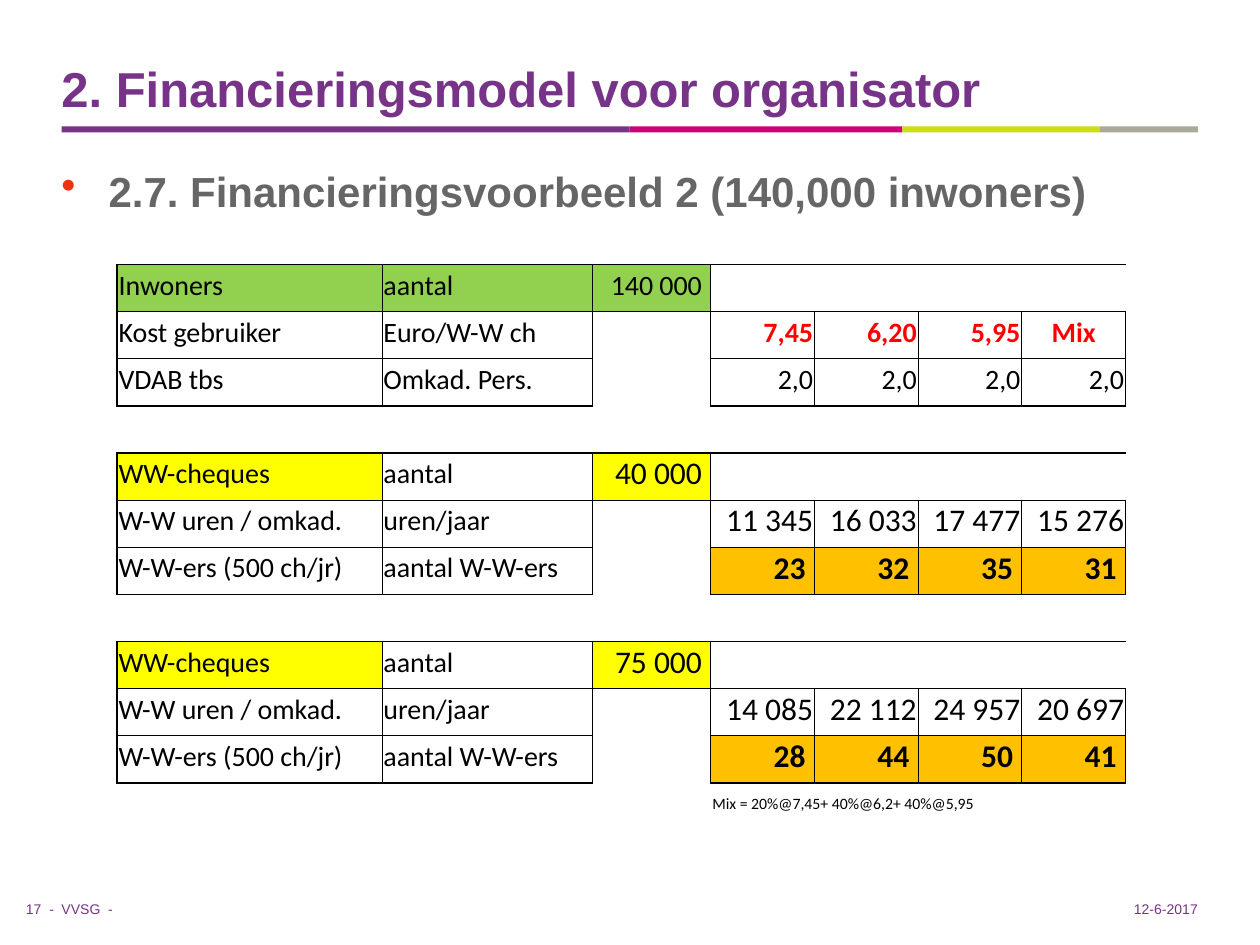
import pptx
import pptx.dml.color
import pptx.enum.shapes
import pptx.enum.text
import pptx.oxml
import pptx.oxml.ns
import pptx.util
from pptx.util import Cm

ALIGN = pptx.enum.text.PP_ALIGN
ANCHOR = pptx.enum.text.MSO_ANCHOR
PURPLE = "773388"
GREEN, YELLOW, ORANGE = "92D050", "FFFF00", "FFC000"
COLUMN_WIDTHS = [5.34, 4.24, 2.39] + [2.09] * 4
BLOCK_ROWS = 3
BLOCK_PITCH = 4
ROW_COUNT = 12
VALUE_COLUMN, FIRST_RATE, LAST_COLUMN = 2, 3, 6

BLOCKS = [
    {
        "labels": [("Inwoners", "aantal"), ("Kost gebruiker", "Euro/W-W ch"), ("VDAB tbs", "Omkad. Pers.")],
        "total": "140 000",
        "rates": [["7,45", "6,20", "5,95", "Mix"], ["2,0"] * 4],
    },
    {
        "total": "40 000",
        "rates": [["11 345", "16 033", "17 477", "15 276"], ["23", "32", "35", "31"]],
    },
    {
        "total": "75 000",
        "rates": [["14 085", "22 112", "24 957", "20 697"], ["28", "44", "50", "41"]],
    },
]
CHEQUE_LABELS = [("WW-cheques", "aantal"), ("W-W uren / omkad.", "uren/jaar"), ("W-W-ers (500 ch/jr)", "aantal W-W-ers")]


def color(hex_string):
    return pptx.dml.color.RGBColor.from_string(hex_string)


def add_run(paragraph, text, size, font_name, font_color, bold=False):
    run = paragraph.add_run()
    run.text = text
    run.font.size = pptx.util.Pt(size)
    run.font.name = font_name
    run.font.bold = bold
    run.font.color.rgb = color(font_color)


def add_textbox(slide, left, top, width, height, anchor=ANCHOR.TOP, align=ALIGN.LEFT):
    frame = slide.shapes.add_textbox(Cm(left), Cm(top), Cm(width), Cm(height)).text_frame
    frame.word_wrap = True
    frame.margin_left = frame.margin_right = frame.margin_top = frame.margin_bottom = 0
    frame.vertical_anchor = anchor
    paragraph = frame.paragraphs[0]
    paragraph.alignment = align
    return paragraph


def add_heading(slide, left, top, width, height):
    paragraph = add_textbox(slide, left, top, 20.42, height - 0.3, ANCHOR.BOTTOM)
    add_run(paragraph, "2. Financieringsmodel voor organisator", 28, "Arial", PURPLE, True)
    stripe_left = left
    for share, fill in ((0.5, PURPLE), (0.24, "CC0077"), (0.174, "CCDD11"), (0.086, "AAAA99")):
        stripe = slide.shapes.add_shape(
            pptx.enum.shapes.MSO_SHAPE.RECTANGLE,
            Cm(stripe_left), Cm(top + height - 0.12), Cm(share * width), Cm(0.12))
        stripe.shadow.inherit = False
        stripe.fill.solid()
        stripe.fill.fore_color.rgb = color(fill)
        stripe.line.fill.background()
        stripe_left += share * width


def add_bullet_line(slide, left, top, width, height):
    paragraph = add_textbox(slide, left, top, width, height)
    properties = paragraph._p.get_or_add_pPr()
    properties.set("marL", str(Cm(0.95)))
    properties.set("indent", str(Cm(-0.95)))
    bullet_color = pptx.oxml.ns.qn("a:buClr")
    properties.append(properties.makeelement(bullet_color))
    properties[-1].append(properties.makeelement(pptx.oxml.ns.qn("a:srgbClr"), {"val": "EE3311"}))
    properties.append(properties.makeelement(pptx.oxml.ns.qn("a:buChar"), {"char": "•"}))
    add_run(paragraph, "2.7. Financieringsvoorbeeld 2 (140,000 inwoners)", 24, "Arial", "666666", True)


def set_borders(cell, widths):
    properties = cell._tc.get_or_add_tcPr()
    for side in "LRTB":
        width = widths.get(side, 0)
        paint = '<a:solidFill><a:srgbClr val="000000"/></a:solidFill>' if width else "<a:noFill/>"
        properties.append(pptx.oxml.parse_xml(
            f'<a:ln{side} {pptx.oxml.ns.nsdecls("a")} w="{pptx.util.Pt(width)}">{paint}</a:ln{side}>'))


def border_widths(row, column):
    block_row = row % BLOCK_PITCH
    is_value = column == VALUE_COLUMN
    if block_row == BLOCK_ROWS:
        widths = {"T": 0 if is_value else 1}
        if row < ROW_COUNT - 1:
            widths["B"] = 1
        return widths
    widths = {
        "L": 1 if column == 0 else 0.5,
        "R": 1 if column == LAST_COLUMN else 0.5,
        "T": 1 if block_row == 0 else 0.5,
        "B": 1 if block_row == BLOCK_ROWS - 1 else 0.5,
    }
    if block_row == 0 and column >= FIRST_RATE:
        widths["R"] = 0
        if column > FIRST_RATE:
            widths["L"] = 0
    if is_value and block_row > 0:
        widths["B"] = 0
        if block_row == 2:
            widths["T"] = 0
    return widths


def fill_cell(cell, text, size=16, align=ALIGN.LEFT, font_color="000000", bold=False, fill=None, gap=0.03):
    cell.margin_right = Cm(gap)
    paragraph = cell.text_frame.paragraphs[0]
    paragraph.alignment = align
    add_run(paragraph, text, size, "Calibri", font_color, bold)
    if fill:
        cell.fill.solid()
        cell.fill.fore_color.rgb = color(fill)


def fill_block(table, top_row, block, is_first):
    header_fill = GREEN if is_first else YELLOW
    number_size = 16 if is_first else 18
    for offset, labels in enumerate(block.get("labels", CHEQUE_LABELS)):
        for column, label in enumerate(labels):
            filled = offset == 0 and (is_first or column == 0)
            fill_cell(table.cell(top_row + offset, column), label, fill=header_fill if filled else None)
    fill_cell(table.cell(top_row, VALUE_COLUMN), block["total"], number_size, ALIGN.RIGHT,
              fill=header_fill, gap=0.18)
    for offset, rates in enumerate(block["rates"], 1):
        highlighted = offset == 2 and not is_first
        is_price = offset == 1 and is_first
        for column, rate in enumerate(rates, FIRST_RATE):
            fill_cell(table.cell(top_row + offset, column), rate, number_size,
                      ALIGN.CENTER if rate == "Mix" else ALIGN.RIGHT,
                      "FF0000" if is_price else "000000", highlighted or is_price,
                      ORANGE if highlighted else None, 0.18 if highlighted else 0.03)
    table.cell(top_row, FIRST_RATE).merge(table.cell(top_row, LAST_COLUMN))
    table.cell(top_row + 1, VALUE_COLUMN).merge(table.cell(top_row + 2, VALUE_COLUMN))


def add_finance_table(slide, left, top, width, height):
    table = slide.shapes.add_table(
        ROW_COUNT, len(COLUMN_WIDTHS), Cm(left), Cm(top), Cm(width), Cm(height)).table
    table.first_row = table.horz_banding = False
    for column, column_width in zip(table.columns, COLUMN_WIDTHS):
        column.width = Cm(column_width)
    for row_index, row in enumerate(table.rows):
        row.height = Cm(height / ROW_COUNT)
        for column_index, cell in enumerate(row.cells):
            cell.margin_left = cell.margin_right = cell.margin_top = Cm(0.03)
            cell.margin_bottom = Cm(0.13)
            cell.vertical_anchor = ANCHOR.MIDDLE
            set_borders(cell, border_widths(row_index, column_index))
            cell.fill.background()
    for index, block in enumerate(BLOCKS):
        fill_block(table, index * BLOCK_PITCH, block, index == 0)
    note = table.cell(ROW_COUNT - 1, FIRST_RATE)
    note.merge(table.cell(ROW_COUNT - 1, LAST_COLUMN))
    fill_cell(note, "Mix = 20%@7,45+ 40%@6,2+ 40%@5,95", 9)


def add_footer(slide, left, top, width, height):
    labels = (
        ("17  -", 0, 1.09, ALIGN.RIGHT),
        ("VVSG  -", 1.24, 1.19, ALIGN.LEFT),
        ("12-6-2017", width - 1.98, 1.98, ALIGN.RIGHT),
    )
    for text, offset, label_width, align in labels:
        paragraph = add_textbox(slide, left + offset, top, label_width, height, ANCHOR.BOTTOM, align)
        add_run(paragraph, text, 8, "Arial", PURPLE)


def main():
    presentation = pptx.Presentation()
    presentation.slide_width = Cm(25.4)
    presentation.slide_height = Cm(19.05)
    slide = presentation.slides.add_slide(presentation.slide_layouts[6])
    add_heading(slide, 1.24, 0, 22.91, 2.67)
    add_bullet_line(slide, 1.24, 3.33, 24.16, 1.2)
    add_finance_table(slide, 2.36, 5.33, sum(COLUMN_WIDTHS), 11.4)
    add_footer(slide, 0, 18.16, 24.15, 0.33)
    presentation.save("out.pptx")


if __name__ == "__main__":
    main()
